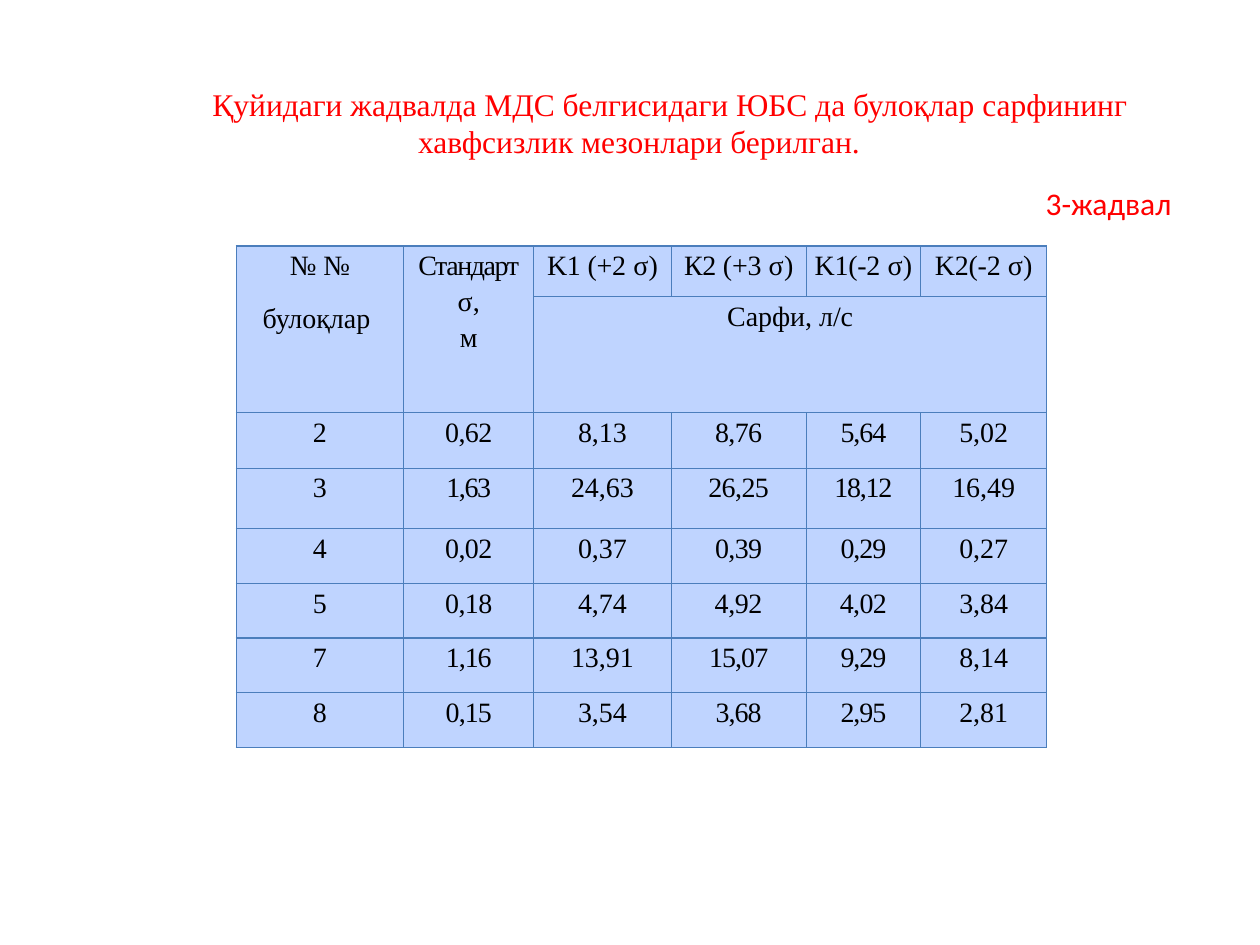
from pptx import Presentation
from pptx.dml.color import RGBColor as RGB
from pptx.enum.text import MSO_ANCHOR as Anchor, MSO_AUTO_SIZE as Fit, PP_ALIGN as Align
from pptx.oxml import parse_xml
from pptx.oxml.ns import nsdecls
from pptx.util import Cm, Pt

RED = RGB(0xFF, 0, 0)
BLACK = RGB(0, 0, 0)
PALE = RGB(0xBF, 0xD4, 0xFF)
EDGE = RGB(0x4B, 0x7E, 0xBC)
SERIF = "Times New Roman"

COLS = [3.38, 2.62, 2.77, 2.72, 2.31, 2.54]
ROWS = [1.02, 2.34, 1.12, 1.22] + [1.1] * 4
LIMITS = ["K1 (+2", "К2 (+3", "K1(-2", "K2(-2"]
FLOWS = [
    ["2", "0,62", "8,13", "8,76", "5,64", "5,02"],
    ["3", "1,63", "24,63", "26,25", "18,12", "16,49"],
    ["4", "0,02", "0,37", "0,39", "0,29", "0,27"],
    ["5", "0,18", "4,74", "4,92", "4,02", "3,84"],
    ["7", "1,16", "13,91", "15,07", "9,29", "8,14"],
    ["8", "0,15", "3,54", "3,68", "2,95", "2,81"],
]
TRACKS = [
    [0, -30, 0, -30, -60, 0],
    [0, -80, 0, -30, -70, 0],
    [0, -30, 0, -30, -60, 0],
    [0, -30, 0, -20, -30, 0],
    [0, -60, 0, -50, -60, 0],
    [0, -50, 0, -50, -60, 0],
]


def style(run, size, face, tint):
    run.font.size = Pt(size)
    run.font.name = face
    run.font.color.rgb = tint


def add_label(slide, text, box, face, wrap):
    shape = slide.shapes.add_textbox(*map(Cm, box))
    frame = shape.text_frame
    frame.text = text
    frame.word_wrap = wrap
    frame.auto_size = Fit.SHAPE_TO_FIT_TEXT
    style(frame.paragraphs[0].runs[0], 18, face, RED)
    return frame


def add_title(slide):
    text = "Қуйидаги жадвалда МДС белгисидаги ЮБС да булоқлар сарфининг хавфсизлик мезонлари берилган."
    frame = add_label(slide, text, (1.57, 1.57, 22.63, 1.8), SERIF, True)
    frame.vertical_anchor = Anchor.MIDDLE
    para = frame.paragraphs[0]
    para.alignment = Align.CENTER
    para._p.get_or_add_pPr().set("indent", str(Cm(1.25)))


def paint(cell):
    cell.margin_left = cell.margin_right = cell.margin_top = cell.margin_bottom = 0
    props = cell._tc.get_or_add_tcPr()
    for side in "LRTB":
        props.append(parse_xml(
            f'<a:ln{side} {nsdecls("a")} w="{Pt(0.75)}"><a:solidFill>'
            f'<a:srgbClr val="{EDGE}"/></a:solidFill></a:ln{side}>'))
    cell.fill.solid()
    cell.fill.fore_color.rgb = PALE


def write(cell, lines, gaps):
    frame = cell.text_frame
    frame.text = "\n".join("" for line in lines)
    for para, line, gap in zip(frame.paragraphs, lines, gaps):
        para.alignment = Align.CENTER
        para.line_spacing = 1.15
        para.space_after = Pt(gap)
        for text, track in line:
            run = para.add_run()
            run.text = text
            style(run, 16, SERIF, BLACK)
            run._r.get_or_add_rPr().set("spc", str(track))


def fill_head(grid):
    for col in (0, 1):
        grid.cell(0, col).merge(grid.cell(1, col))
    grid.cell(1, 2).merge(grid.cell(1, 5))
    write(grid.cell(0, 0), [[("№ №", 0)], [("булоқлар ", 0)]], [10, 10])
    write(grid.cell(0, 1), [[("Стандарт", -80)], [("σ,", 10)], [("м", 0)]], [0, 0, 10])
    for col, text in enumerate(LIMITS, 2):
        write(grid.cell(0, col), [[(text, -10), (" σ", 10), (")", -10)]], [0])
    write(grid.cell(1, 2), [[("Сарфи, л/с", 0)]], [0])


def add_grid(slide):
    frame = slide.shapes.add_table(
        len(ROWS), len(COLS), Cm(4.76), Cm(4.96), Cm(sum(COLS)), Cm(sum(ROWS)))
    grid = frame.table
    grid.first_row = grid.horz_banding = False
    for col, width in zip(grid.columns, COLS):
        col.width = Cm(width)
    for row, height in zip(grid.rows, ROWS):
        row.height = Cm(height)
    for cell in grid.iter_cells():
        paint(cell)
    fill_head(grid)
    for row, (flows, tracks) in enumerate(zip(FLOWS, TRACKS), 2):
        for col, pair in enumerate(zip(flows, tracks)):
            write(grid.cell(row, col), [[pair]], [10])


def main():
    deck = Presentation()
    deck.slide_width = Cm(25.4)
    deck.slide_height = Cm(19.05)
    slide = deck.slides.add_slide(deck.slide_layouts[6])
    add_title(slide)
    add_grid(slide)
    add_label(slide, "3-жадвал", (20.83, 3.58, 3.07, 1.02), "Calibri", False)
    deck.save("out.pptx")


if __name__ == "__main__":
    main()
